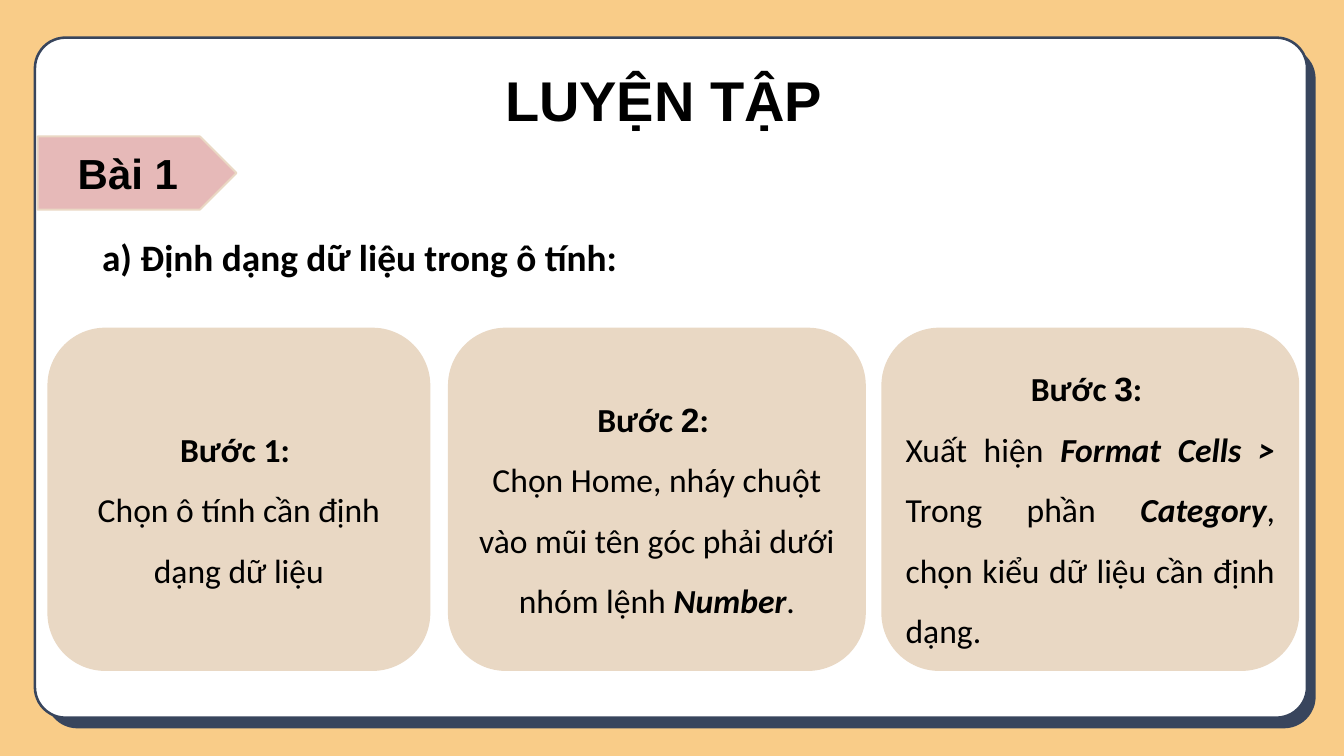
import pptx
import pptx.util
import pptx.dml.color
import pptx.enum.shapes
import pptx.enum.text

Inches, Pt = pptx.util.Inches, pptx.util.Pt
SHAPE = pptx.enum.shapes.MSO_SHAPE
ALIGN = pptx.enum.text.PP_ALIGN
ANCHOR = pptx.enum.text.MSO_ANCHOR

COLORS = {
    "background": "F9CC88",
    "navy": "38455D",
    "white": "FFFFFF",
    "pink": "E6B9B8",
    "tag_line": "EAD8C4",
    "beige": "E9D8C4",
    "text": "000000",
}
PLAIN = {"name": "Calibri", "bold": False, "italic": False}
BOLD = {"name": "Calibri", "bold": True}
HEADING = {"name": "Arial", "bold": True}
COMMAND = {"name": "Calibri", "bold": True, "italic": True}

STEP_TOP, STEP_HEIGHT = 4.89, 5.08
# left, width, number font, alignment of the body, body runs
STEPS = [
    (0.72, 5.67, BOLD, ALIGN.CENTER,
     [("Chọn ô tính cần định dạng dữ liệu", PLAIN)]),
    (6.68, 6.19, HEADING, ALIGN.CENTER,
     [("Chọn Home, nháy chuột vào mũi tên góc phải dưới nhóm lệnh ", PLAIN),
      ("Number", COMMAND), (".", PLAIN)]),
    (13.13, 6.19, HEADING, ALIGN.JUSTIFY,
     [("Xuất hiện ", PLAIN), ("Format Cells >", COMMAND),
      (" Trong phần ", PLAIN), ("Category", COMMAND),
      (", chọn kiểu dữ liệu cần định dạng.", PLAIN)]),
]


def rgb(name):
    return pptx.dml.color.RGBColor.from_string(COLORS[name])


def add_box(s, kind, box, fill, line, line_width):
    sp = s.shapes.add_shape(kind, *map(Inches, box))
    sp.shadow.inherit = False
    sp.fill.solid()
    sp.fill.fore_color.rgb = rgb(fill)
    sp.line.color.rgb = rgb(line)
    sp.line.width = Pt(line_width)
    return sp


def write(sp, paragraphs, size, spacing=None):
    """Fill a shape with (alignment, runs) paragraphs; a run is (text, format)."""
    tf = sp.text_frame
    tf.word_wrap = True
    for i, (align, runs) in enumerate(paragraphs):
        p = tf.paragraphs[0] if i == 0 else tf.add_paragraph()
        p.alignment = align
        p.line_spacing = spacing
        for text, values in runs:
            r = p.add_run()
            r.text = text
            r.font.size = Pt(size)
            r.font.color.rgb = rgb("text")
            for name, value in values.items():
                setattr(r.font, name, value)


def add_text(s, box, text, values, size, align):
    sp = s.shapes.add_textbox(*map(Inches, box))
    write(sp, [(align, [(text, values)])], size)
    sp.text_frame.auto_size = pptx.enum.text.MSO_AUTO_SIZE.SHAPE_TO_FIT_TEXT


def add_card(s):
    """White rounded card over a navy one that shows at its right and bottom."""
    for box, fill in (((0.7, 0.72, 18.86, 10.1), "navy"),
                      ((0.52, 0.56, 18.93, 10.12), "white")):
        sp = add_box(s, SHAPE.ROUNDED_RECTANGLE, box, fill, "navy", 2.75)
        sp.adjustments[0] = 0.045


def add_tag(s, text):
    sp = add_box(s, SHAPE.PENTAGON, (0.56, 2.03, 2.96, 1.09),
                 "pink", "tag_line", 2)
    sp.text_frame.vertical_anchor = ANCHOR.MIDDLE
    write(sp, [(ALIGN.CENTER, [(text, HEADING)])], 45)


def add_step(s, number, left, width, number_font, align, body):
    sp = add_box(s, SHAPE.ROUNDED_RECTANGLE,
                 (left, STEP_TOP, width, STEP_HEIGHT), "beige", "beige", 2)
    sp.text_frame.vertical_anchor = ANCHOR.MIDDLE
    title = [("Bước ", BOLD), (str(number), number_font), (": ", BOLD)]
    write(sp, [(ALIGN.CENTER, title), (align, body)], 36, 1.5)


def main():
    prs = pptx.Presentation()
    prs.slide_width, prs.slide_height = Inches(20), Inches(11.25)
    s = prs.slides.add_slide(prs.slide_layouts[6])
    s.background.fill.solid()
    s.background.fill.fore_color.rgb = rgb("background")

    add_card(s)
    add_text(s, (4.65, 0.92, 10.67, 1.11), "LUYỆN TẬP ", HEADING, 60, ALIGN.CENTER)
    add_tag(s, "Bài 1")
    add_text(s, (1.42, 3.43, 14.92, 0.77), "a) Định dạng dữ liệu trong ô tính:",
             BOLD, 40, ALIGN.LEFT)
    for number, step in enumerate(STEPS, 1):
        add_step(s, number, *step)

    prs.save("out.pptx")


if __name__ == "__main__":
    main()
